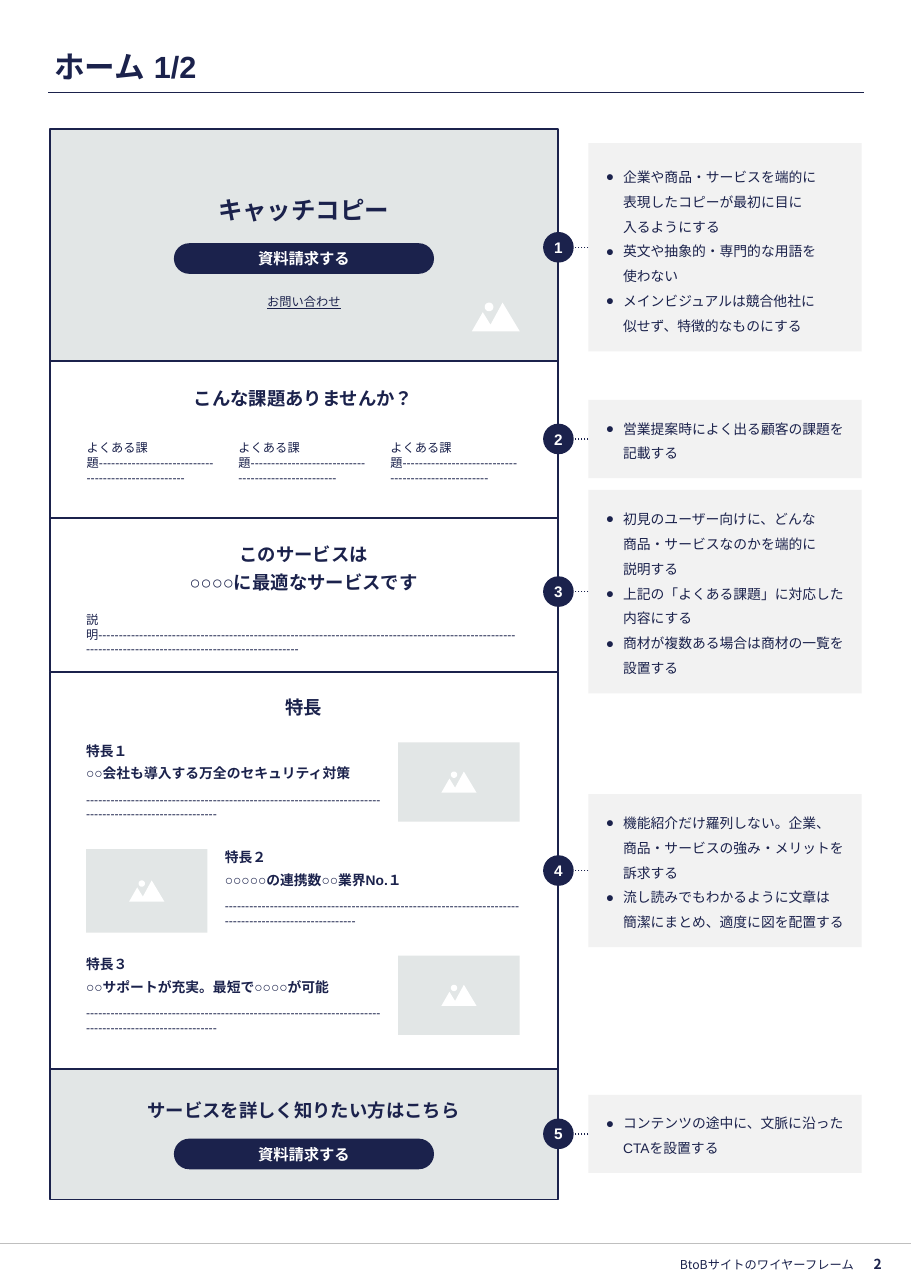
import copy
import math

import pptx
import pptx.dml.color
import pptx.enum.dml
import pptx.enum.lang
import pptx.enum.shapes
import pptx.enum.text
import pptx.oxml
import pptx.oxml.ns
import pptx.util
from lxml import etree

Pt = pptx.util.Pt
qn = pptx.oxml.ns.qn
SHAPE = pptx.enum.shapes.MSO_SHAPE
ALIGN = {"l": pptx.enum.text.PP_ALIGN.LEFT, "c": pptx.enum.text.PP_ALIGN.CENTER,
         "r": pptx.enum.text.PP_ALIGN.RIGHT}
ANCHOR = {"t": pptx.enum.text.MSO_ANCHOR.TOP, "m": pptx.enum.text.MSO_ANCHOR.MIDDLE}
COLORS = {"navy": "1B224C", "grey": "E2E6E6", "note": "F2F2F2",
          "rule": "BFBFBF", "white": "FFFFFF"}
INDENT = 11.34


def rgb(name):
    return pptx.dml.color.RGBColor.from_string(COLORS[name])


def write(tf, text, size=9, bold=False, color="navy", font="Arial", align="l",
          anchor="t", inset=(0, 0, 0, 0), after=0, spacing=None,
          underline=False, bullet=False):
    """Fill a text frame; a list gives paragraphs, a newline gives a line break."""
    tf.word_wrap = True
    tf.vertical_anchor = ANCHOR[anchor]
    tf.margin_left, tf.margin_top, tf.margin_right, tf.margin_bottom = map(Pt, inset)
    for i, content in enumerate([text] if isinstance(text, str) else text):
        p = tf.add_paragraph() if i else tf.paragraphs[0]
        p.text = content
        p.alignment = ALIGN[align]
        p.space_after = Pt(after)
        if spacing:
            p.line_spacing = spacing
        if bullet:
            pPr = p._p.get_or_add_pPr()
            pPr.set("marL", str(Pt(INDENT)))
            pPr.set("indent", str(-Pt(INDENT)))
            clr = etree.SubElement(pPr, qn("a:buClr"))
            etree.SubElement(clr, qn("a:srgbClr"), val=COLORS[color])
            etree.SubElement(pPr, qn("a:buFont"), typeface=font)
            etree.SubElement(pPr, qn("a:buChar"), char="●")
        for r in p.runs:
            r.font.size = Pt(size)
            r.font.bold = bold
            r.font.underline = underline
            r.font.name = font
            r.font.color.rgb = rgb(color)
            r.font.language_id = pptx.enum.lang.MSO_LANGUAGE_ID.JAPANESE
            rPr = r._r.get_or_add_rPr()
            rPr.find(qn("a:latin")).addnext(
                rPr.makeelement(qn("a:ea"), {"typeface": font}))
        for br in p._p.findall(qn("a:br")):
            br.append(copy.deepcopy(rPr))


class Page:
    def __init__(self, prs):
        self.s = prs.slides.add_slide(prs.slide_layouts[6])

    def style(self, sp, fill=None, line=None):
        sp.shadow.inherit = False
        if fill:
            sp.fill.solid()
            sp.fill.fore_color.rgb = rgb(fill)
        else:
            sp.fill.background()
        if line:
            sp.line.color.rgb = rgb(line)
            sp.line.width = Pt(1.25)
        else:
            sp.line.fill.background()
        return sp

    def shape(self, x, y, w, h, kind=SHAPE.RECTANGLE, fill=None, line=None):
        sp = self.s.shapes.add_shape(kind, Pt(x), Pt(y), Pt(w), Pt(h))
        return self.style(sp, fill, line)

    def text(self, x, y, w, h, text, **fmt):
        sp = self.s.shapes.add_textbox(Pt(x), Pt(y), Pt(w), Pt(h))
        write(sp.text_frame, text, **fmt)

    def line(self, x1, y1, x2, y2, color="navy", width=1.0, dotted=False):
        c = self.s.shapes.add_connector(
            pptx.enum.shapes.MSO_CONNECTOR.STRAIGHT, Pt(x1), Pt(y1), Pt(x2), Pt(y2))
        c.line.color.rgb = rgb(color)
        c.line.width = Pt(width)
        if dotted:
            c.line.dash_style = pptx.enum.dml.MSO_LINE.ROUND_DOT
        etree.SubElement(c._element.spPr, qn("a:effectLst"))
        return c

    def button(self, y):
        sp = self.shape(113.6, y, 170, 20, SHAPE.ROUNDED_RECTANGLE, "navy")
        sp.adjustments[0] = 0.5
        write(sp.text_frame, "資料請求する", size=10, bold=True, color="white",
              align="c", anchor="m")

    def icon(self, x, y, w):
        """Mountains and sun, 1000 units wide and 600 high."""
        sun = [(360 + 90 * math.cos(a * math.pi / 16), 90 + 90 * math.sin(a * math.pi / 16))
               for a in range(32)]
        hills = [(640, 0), (1000, 600), (0, 600), (230, 200), (390, 460)]
        fb = self.s.shapes.build_freeform(*sun[0], scale=Pt(w) / 1000)
        fb.add_line_segments(sun[1:], close=True)
        fb.move_to(*hills[0])
        fb.add_line_segments(hills[1:], close=True)
        self.style(fb.convert_to_shape(Pt(x), Pt(y)), "white")

    def image_box(self, x, y, h):
        w, icon_w = 79.4, 23
        self.shape(x, y, w, h, fill="grey")
        self.icon(x + (w - icon_w) / 2, y + (h - icon_w * 0.6) / 2, icon_w)

    def note(self, number, y, h, items):
        sp = self.shape(384.5, y, 178.6, h, fill="note")
        top = INDENT if number == 1 else 8.5
        write(sp.text_frame, items, anchor="m", spacing=1.5, bullet=True,
              inset=(INDENT, top, INDENT, INDENT))
        mid, d = y + h / 2, 20
        dot = self.shape(354.9, mid - d / 2, d, d, SHAPE.OVAL, "navy")
        write(dot.text_frame, str(number), size=10, bold=True, color="white",
              align="c", anchor="m")
        self.line(384.5, mid, 374.9, mid, dotted=True).begin_connect(sp, 1)


def main():
    prs = pptx.Presentation()
    prs.slide_width, prs.slide_height = Pt(595.28), Pt(841.89)
    page = Page(prs)
    heading = dict(size=12, bold=True, align="c", after=4)
    left, width = 56.6, 283.6

    # Header and footer
    page.line(31.7, 60.5, 564.5, 60.5)
    page.line(0, 812.6, 595.28, 812.6, color="rule", width=0.5)
    pad = (2.83,) * 4
    page.text(32.6, 28.3, 530, 30.2, "ホーム 1/2", size=20, bold=True, anchor="m", inset=pad)
    page.text(360, 819.3, 200.9, 14.4, "BtoBサイトのワイヤーフレーム", size=8,
              font="Noto Sans CJK JP", align="r", anchor="m", inset=pad)
    page.text(562.3, 819.3, 22.3, 14.4, "2", size=9, bold=True,
              font="Noto Sans CJK JP", align="c", anchor="m", inset=pad)

    # Section frames, stacked from the top
    edges = [84.2, 236.2, 338.6, 439, 699, 784.1]
    for top, bottom, fill in zip(edges, edges[1:], ["grey", None, None, None, "grey"]):
        page.shape(32.6, top, 331.8, bottom - top, fill=fill, line="navy")

    # Main visual
    page.text(left, 126.7, width, 20.2, "キャッチコピー", size=16, bold=True,
              align="c", anchor="m")
    page.button(159)
    page.text(113.6, 190, 170, 14.4, "お問い合わせ", size=8, underline=True,
              align="c", anchor="m")
    page.icon(308.3, 197.8, 31.4)

    # Common problems
    page.text(left, 253.4, width, 17.3, "こんな課題ありませんか？", **heading)
    for i in range(3):
        page.text(left + 99.2 * i, 288, 85, 31, "よくある課題" + "-" * 52, size=8)

    # Service description
    page.text(left, 355, width, 33.8, ["このサービスは", "○○○○に最適なサービスです"], **heading)
    page.text(56.2, 400.3, width, 22.3, "説明" + "-" * 154, size=8)

    # Features: text and image swap sides on the second row
    page.text(left, 455, width, 17.3, "特長", **heading)
    features = [("特長１", "○○会社も導入する万全のセキュリティ対策", 56.2, 260.2, 51.8),
                ("特長２", "○○○○○の連携数○○業界No.１", 146.9, 56.2, 54.7),
                ("特長３", "○○サポートが充実。最短で○○○○が可能", 56.2, 260.2, 51.8)]
    for i, (name, claim, text_x, image_x, image_h) in enumerate(features):
        y = 485.3 + 69.7 * i
        page.text(text_x, y, 193, 28, [name, claim], bold=True, after=4)
        page.text(text_x, y + 32.4, 193, 19.4, "-" * 104, size=8)
        page.image_box(image_x, y, image_h)

    # Call to action
    page.text(left, 719.3, width, 13, "サービスを詳しく知りたい方はこちら",
              size=12, bold=True, align="c", anchor="m")
    page.button(744.3)

    # Numbered notes
    notes = [
        (93.6, 136.1, ["企業や商品・サービスを端的に\n表現したコピーが最初に目に\n入るようにする",
                       "英文や抽象的・専門的な用語を\n使わない",
                       "メインビジュアルは競合他社に\n似せず、特徴的なものにする"]),
        (261.4, 51.1, ["営業提案時によく出る顧客の課題を\n記載する"]),
        (320.2, 133, ["初見のユーザー向けに、どんな\n商品・サービスなのかを端的に\n説明する",
                      "上記の「よくある課題」に対応した\n内容にする",
                      "商材が複数ある場合は商材の一覧を\n設置する"]),
        (519, 100.1, ["機能紹介だけ羅列しない。企業、\n商品・サービスの強み・メリットを\n訴求する",
                      "流し読みでもわかるように文章は\n簡潔にまとめ、適度に図を配置する"]),
        (715.6, 51.1, ["コンテンツの途中に、文脈に沿った\nCTAを設置する"]),
    ]
    for number, (y, h, items) in enumerate(notes, 1):
        page.note(number, y, h, items)

    prs.save("out.pptx")


if __name__ == "__main__":
    main()
